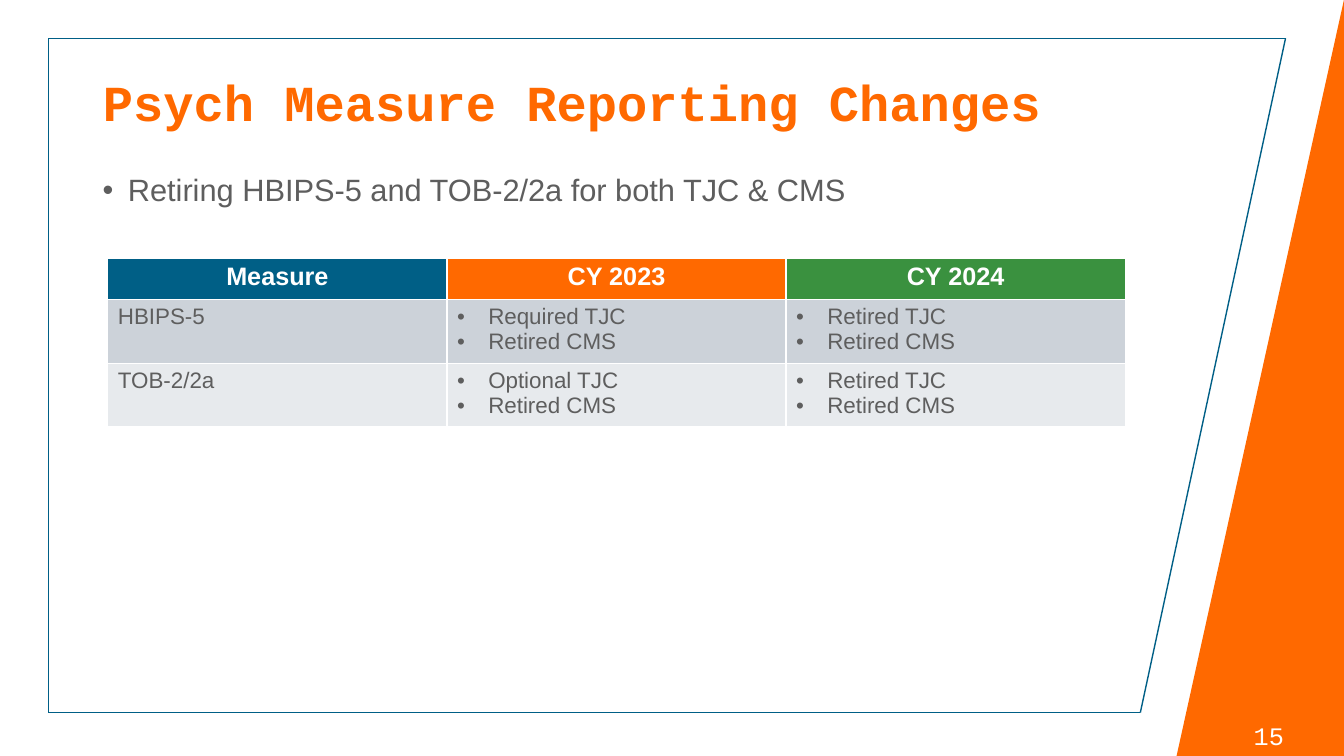
from lxml import etree
from pptx import Presentation
from pptx.dml.color import RGBColor
from pptx.enum.shapes import MSO_CONNECTOR, MSO_SHAPE
from pptx.enum.text import MSO_ANCHOR, PP_ALIGN
from pptx.oxml.ns import qn
from pptx.util import Inches, Pt

STRAIGHT = MSO_CONNECTOR.STRAIGHT
RIGHT_TRIANGLE = MSO_SHAPE.RIGHT_TRIANGLE
MIDDLE = MSO_ANCHOR.MIDDLE
LEFT, CENTER = PP_ALIGN.LEFT, PP_ALIGN.CENTER


class Theme:
    orange = RGBColor.from_string("FF6900")
    blue = RGBColor.from_string("005F86")
    green = RGBColor.from_string("3A913F")
    gray = RGBColor.from_string("5E5E5E")
    white = RGBColor.from_string("FFFFFF")
    dark_band = RGBColor.from_string("CCD2D9")
    light_band = RGBColor.from_string("E7EAED")
    heading_font, body_font = "Courier New", "Arial"
    title_size, body_size = Pt(36), Pt(22)
    header_size, cell_size = Pt(18), Pt(16)


def add_span(para, text, font, size, color, bold=False, align=LEFT):
    para.alignment = align
    span = para.add_run()
    span.text = text
    span.font.name = font
    span.font.size = size
    span.font.bold = bold
    span.font.color.rgb = color


def add_bullet(para, indent):
    properties = para._p.get_or_add_pPr()
    properties.set("marL", str(Inches(indent)))
    properties.set("indent", str(-Inches(indent)))
    etree.SubElement(properties, qn("a:buFont")).set("typeface", "Arial")
    etree.SubElement(properties, qn("a:buChar")).set("char", "•")


deck = Presentation()
deck.slide_width, deck.slide_height = Inches(13.33), Inches(7.5)
page = deck.slides.add_slide(deck.slide_layouts[5])

# Orange wedge on the right edge
wedge = page.shapes.add_shape(
    RIGHT_TRIANGLE, Inches(11.67), Inches(0), Inches(1.66), Inches(7.5))
wedge._element.spPr.find(qn("a:xfrm")).set("flipH", "1")
wedge.shadow.inherit = False
wedge.fill.solid()
wedge.fill.fore_color.rgb = Theme.orange
wedge.line.fill.background()

# Slanted frame
corners = [(0.48, 0.38), (12.75, 0.38), (11.31, 7.07), (0.48, 7.07)]
for start, end in zip(corners, corners[1:] + corners[:1]):
    edge = page.shapes.add_connector(
        STRAIGHT, *[Inches(value) for value in start + end])
    edge.line.color.rgb = Theme.blue
    edge.line.width = Pt(1)
    etree.SubElement(edge._element.spPr, qn("a:effectLst"))

# Page number
number = page.shapes.add_textbox(
    Inches(12.22), Inches(7.1), Inches(0.73), Inches(0.4)).text_frame
number.word_wrap = True
number.vertical_anchor = MIDDLE
add_span(number.paragraphs[0], "15", Theme.heading_font, Theme.header_size,
         Theme.white, align=CENTER)

# Title
title = page.shapes.title
title.left, title.top = Inches(0.92), Inches(0.4)
title.width, title.height = Inches(11.5), Inches(1.28)
title.text_frame.vertical_anchor = MIDDLE
title_para = title.text_frame.paragraphs[0]
title_para.line_spacing = 0.9
add_span(title_para, "Psych Measure Reporting Changes", Theme.heading_font,
         Theme.title_size, Theme.orange, bold=True)

# Summary bullet
summary = page.shapes.add_textbox(
    Inches(0.92), Inches(1.69), Inches(10.44), Inches(0.72)).text_frame
summary.word_wrap = True
summary_para = summary.paragraphs[0]
add_bullet(summary_para, 0.25)
summary_para.line_spacing = 0.9
add_span(summary_para, "Retiring HBIPS-5 and TOB-2/2a for both TJC & CMS",
         Theme.body_font, Theme.body_size, Theme.gray)

# Measure table
headers = [("Measure", Theme.blue), ("CY 2023", Theme.orange),
           ("CY 2024", Theme.green)]
measures = [
    (Theme.dark_band, "HBIPS-5", ["Required TJC", "Retired CMS"],
     ["Retired TJC", "Retired CMS"]),
    (Theme.light_band, "TOB-2/2a", ["Optional TJC", "Retired CMS"],
     ["Retired TJC", "Retired CMS"]),
]
table = page.shapes.add_table(
    3, 3, Inches(1.07), Inches(2.56), Inches(10.09), Inches(1.59)).table
for row, height in zip(table.rows, (0.41, 0.59, 0.59)):
    row.height = Inches(height)

for column, (label, color) in enumerate(headers):
    cell = table.cell(0, column)
    cell.fill.solid()
    cell.fill.fore_color.rgb = color
    add_span(cell.text_frame.paragraphs[0], label, Theme.body_font,
             Theme.header_size, Theme.white, bold=True, align=CENTER)

for row_index, (band, measure, *years) in enumerate(measures, start=1):
    for column, entries in enumerate([[measure], *years]):
        cell = table.cell(row_index, column)
        cell.fill.solid()
        cell.fill.fore_color.rgb = band
        frame = cell.text_frame
        for position, entry in enumerate(entries):
            para = frame.add_paragraph() if position else frame.paragraphs[0]
            if column:
                add_bullet(para, 0.31)
            add_span(para, entry, Theme.body_font, Theme.cell_size, Theme.gray)

deck.save("out.pptx")
